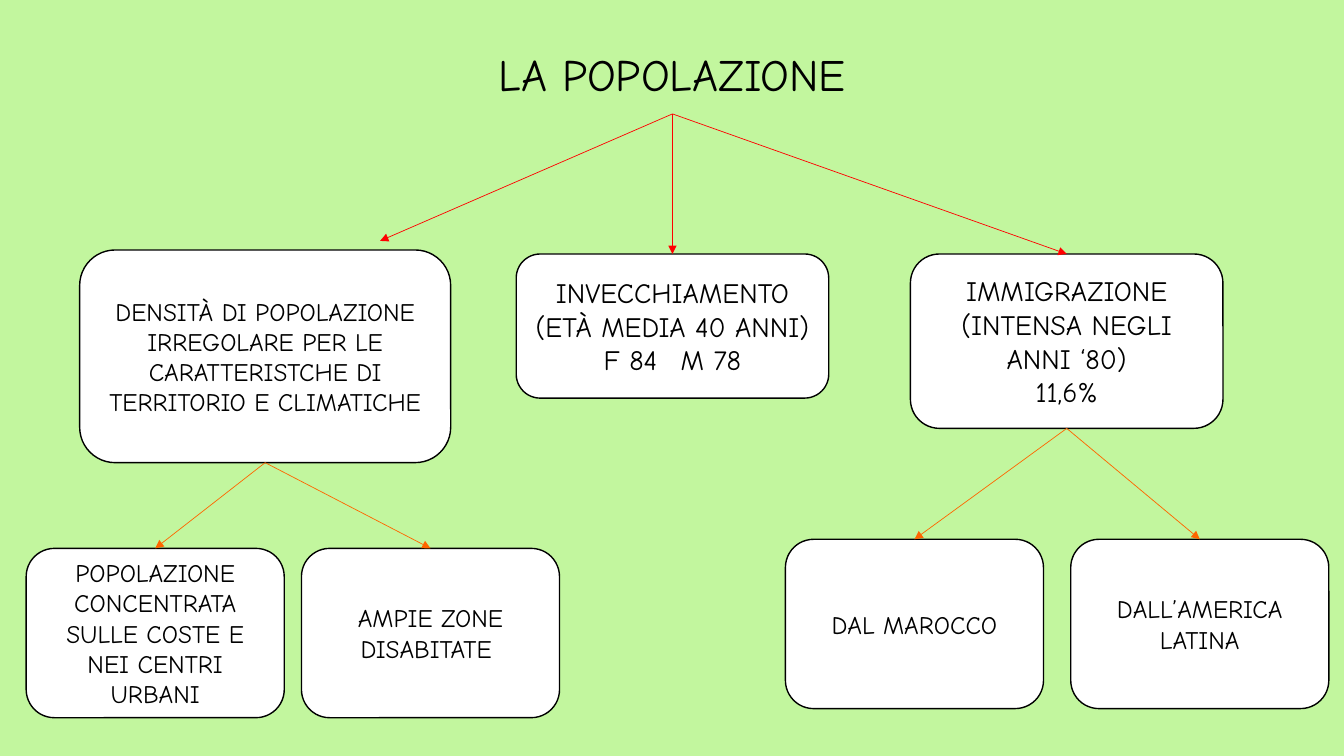
from lxml import etree
from pptx import Presentation
from pptx.dml.color import RGBColor
from pptx.enum.shapes import MSO_CONNECTOR, MSO_SHAPE
from pptx.enum.text import MSO_ANCHOR, PP_ALIGN
from pptx.oxml.ns import qn
from pptx.util import Inches, Pt

FONT = "Comic Neue"
GREEN, WHITE, BLACK, RED, ORANGE = "C2F69E", "FFFFFF", "000000", "FF0000", "FF6600"
ROUNDED = MSO_SHAPE.ROUNDED_RECTANGLE
STRAIGHT = MSO_CONNECTOR.STRAIGHT
MIDDLE = MSO_ANCHOR.MIDDLE
CENTER = PP_ALIGN.CENTER
TOP_SITE, BOTTOM_SITE = 0, 2
LEAF_W, LEAF_H = 2.56, 1.68


def rgb(color):
    return RGBColor.from_string(color)


def write(s, lines, size):
    """Centred text, one paragraph per line."""
    tf = s.text_frame
    tf.word_wrap = True
    tf.vertical_anchor = MIDDLE
    for i, line in enumerate(lines):
        p = tf.paragraphs[0] if i == 0 else tf.add_paragraph()
        p.text = line
        p.alignment = CENTER
        p.font.name = FONT
        p.font.size = Pt(size)
        p.font.color.rgb = rgb(BLACK)


def add_title(slide, text):
    s = slide.shapes.add_textbox(Inches(0.92), Inches(0.4), Inches(11.5), Inches(0.73))
    write(s, [text], 32)
    s.text_frame.paragraphs[0].line_spacing = 0.9
    return s


def add_box(slide, x, y, w, h, lines, size=18):
    s = slide.shapes.add_shape(ROUNDED, Inches(x), Inches(y), Inches(w), Inches(h))
    s.shadow.inherit = False
    s.fill.solid()
    s.fill.fore_color.rgb = rgb(WHITE)
    s.line.color.rgb = rgb(BLACK)
    s.line.width = Pt(1)
    write(s, lines, size)
    return s


def add_after_gap(p, text, gap):
    """Append text after one space widened by gap points."""
    r = p.add_run()
    r.text = " "
    r.font._element.set("spc", str(gap * 100))
    p.add_run().text = text


def add_arrow(slide, parent, child, color, end=(0, 0)):
    """Arrow from the parent's bottom to the child's top, or to a free end."""
    c = slide.shapes.add_connector(STRAIGHT, 0, 0, Inches(end[0]), Inches(end[1]))
    c.begin_connect(parent, BOTTOM_SITE)
    if child is not None:
        c.end_connect(child, TOP_SITE)
    c.line.color.rgb = rgb(color)
    c.line.width = Pt(0.5)
    etree.SubElement(c.line._get_or_add_ln(), qn("a:tailEnd"), type="triangle")
    etree.SubElement(c._element.spPr, qn("a:effectLst"))


def main():
    prs = Presentation()
    prs.slide_width, prs.slide_height = Inches(13.33), Inches(7.5)
    slide = prs.slides.add_slide(prs.slide_layouts[6])
    slide.background.fill.solid()
    slide.background.fill.fore_color.rgb = rgb(GREEN)

    # Title and the three main topics
    title = add_title(slide, "LA POPOLAZIONE")
    density = add_box(slide, 0.79, 2.48, 3.68, 2.11, [
        "DENSITÀ DI POPOLAZIONE IRREGOLARE PER LE CARATTERISTCHE DI TERRITORIO E CLIMATICHE"])
    ageing = add_box(slide, 5.12, 2.52, 3.1, 1.43, [
        "INVECCHIAMENTO", "(ETÀ MEDIA 40 ANNI)", "F 84"], 20)
    add_after_gap(ageing.text_frame.paragraphs[-1], "M 78", 10)
    immigration = add_box(slide, 9.03, 2.52, 3.1, 1.73, [
        "IMMIGRAZIONE", "(INTENSA NEGLI ANNI ‘80)", "11,6%"], 20)

    # Red arrows; the one to density stops short of its box
    add_arrow(slide, title, None, RED, (3.77, 2.39))
    for topic in (ageing, immigration):
        add_arrow(slide, title, topic, RED)

    # Details under the outer topics, with orange arrows
    details = [
        (density, 0.26, 5.44, "POPOLAZIONE CONCENTRATA SULLE COSTE E NEI CENTRI URBANI"),
        (density, 2.99, 5.44, "AMPIE ZONE DISABITATE "),
        (immigration, 7.79, 5.35, "DAL MAROCCO"),
        (immigration, 10.62, 5.35, "DALL’AMERICA LATINA"),
    ]
    for topic, x, y, text in details:
        detail = add_box(slide, x, y, LEAF_W, LEAF_H, [text])
        add_arrow(slide, topic, detail, ORANGE)

    prs.save("out.pptx")


if __name__ == "__main__":
    main()
